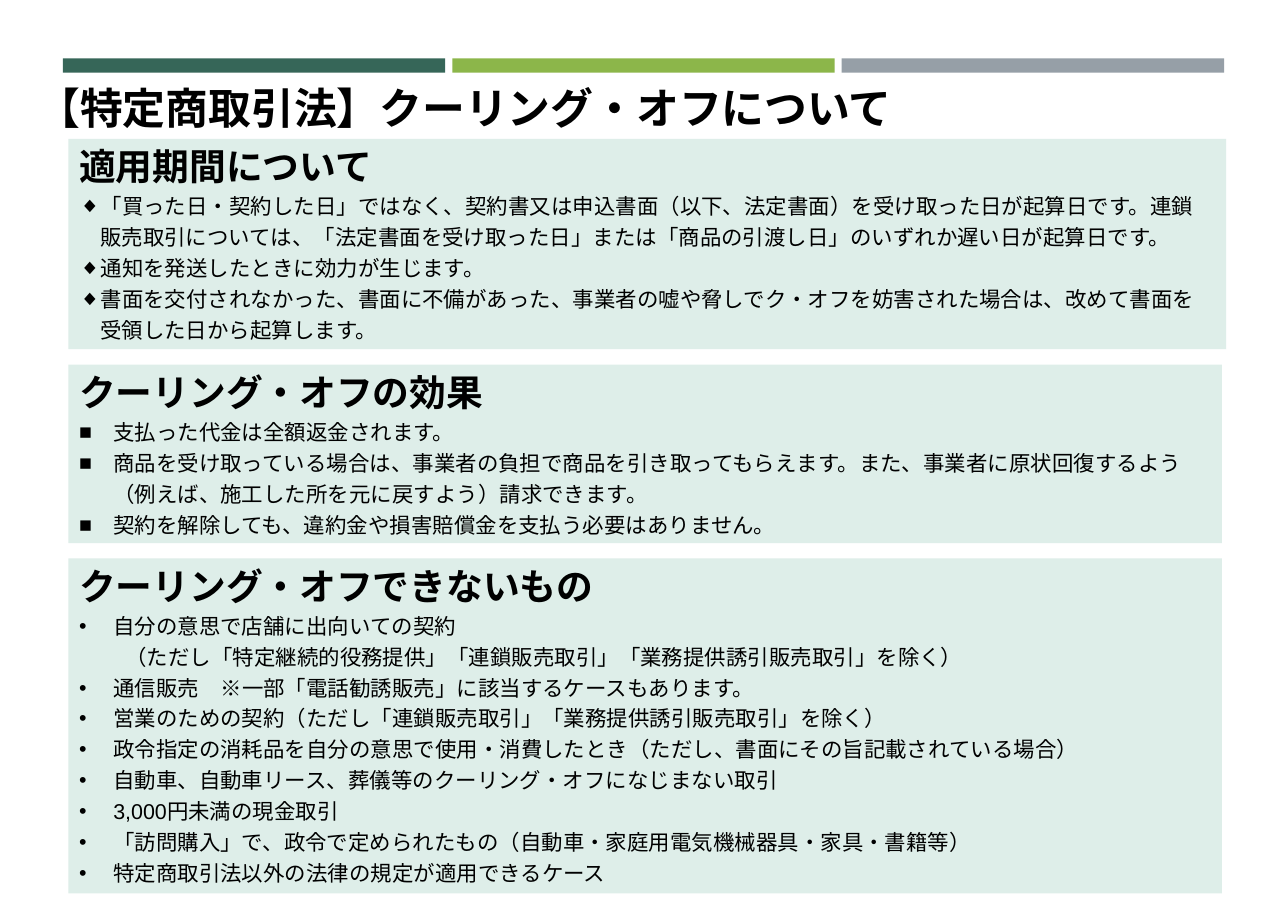
from lxml import etree
from pptx import Presentation
from pptx.dml.color import RGBColor
from pptx.enum.shapes import MSO_SHAPE
from pptx.enum.text import MSO_ANCHOR, MSO_AUTO_SIZE, PP_ALIGN
from pptx.oxml.ns import qn
from pptx.util import Inches, Pt

RECT = MSO_SHAPE.RECTANGLE
TOP = MSO_ANCHOR.TOP
LEFT = PP_ALIGN.LEFT
GROW = MSO_AUTO_SIZE.SHAPE_TO_FIT_TEXT
FONT = "Arial"
COLORS = {"pine": "366658", "leaf": "8CB64A", "slate": "969FA7",
          "panel": "DEEEE9", "text": "000000"}

BARS = ["pine", "leaf", "slate"]
TITLE = "【特定商取引法】クーリング・オフについて"
EXCEPTION = "（ただし「特定継続的役務提供」「連鎖販売取引」「業務提供誘引販売取引」を除く）"
PANELS = [
    (1.26, 10.51, 1.91, "◆", 0.19, "適用期間について", [
        "「買った日・契約した日」ではなく、契約書又は申込書面（以下、法定書面）を受け取った日が起算日です。連鎖販売取引については、「法定書面を受け取った日」または「商品の引渡し日」のいずれか遅い日が起算日です。",
        "通知を発送したときに効力が生じます。",
        "書面を交付されなかった、書面に不備があった、事業者の嘘や脅しでク・オフを妨害された場合は、改めて書面を受領した日から起算します。",
    ]),
    (3.31, 10.47, 1.62, "■", 0.31, "クーリング・オフの効果", [
        "支払った代金は全額返金されます。",
        "商品を受け取っている場合は、事業者の負担で商品を引き取ってもらえます。また、事業者に原状回復するよう（例えば、施工した所を元に戻すよう）請求できます。",
        "契約を解除しても、違約金や損害賠償金を支払う必要はありません。",
    ]),
    (5.07, 10.47, 3.04, "•", 0.31, "クーリング・オフできないもの", [
        "自分の意思で店舗に出向いての契約",
        EXCEPTION,
        "通信販売　※一部「電話勧誘販売」に該当するケースもあります。",
        "営業のための契約（ただし「連鎖販売取引」「業務提供誘引販売取引」を除く）",
        "政令指定の消耗品を自分の意思で使用・消費したとき（ただし、書面にその旨記載されている場合）",
        "自動車、自動車リース、葬儀等のクーリング・オフになじまない取引",
        "3,000円未満の現金取引",
        "「訪問購入」で、政令で定められたもの（自動車・家庭用電気機械器具・家具・書籍等）",
        "特定商取引法以外の法律の規定が適用できるケース",
    ]),
]


class CoolingOffSlide:
    """Draws bars, titles and bulleted panels in one style on a slide."""

    def __init__(self, s):
        self.s = s

    def rect(self, x, y, w, h, color):
        sp = self.s.shapes.add_shape(RECT, Inches(x), Inches(y), Inches(w), Inches(h))
        sp.shadow.inherit = False
        sp.fill.solid()
        sp.fill.fore_color.rgb = RGBColor.from_string(COLORS[color])
        sp.line.fill.background()
        return sp

    def style(self, p, size, bold=False):
        p.alignment = LEFT
        for r in p.runs:
            r.font.name = FONT
            r.font.size = Pt(size)
            r.font.bold = bold
            r.font.color.rgb = RGBColor.from_string(COLORS["text"])
            rPr = r.font._element
            rPr.set("lang", "ja-JP")
            etree.SubElement(rPr, qn("a:ea")).set("typeface", FONT)

    def title(self, x, y, w, h, text):
        tf = self.s.shapes.add_textbox(Inches(x), Inches(y), Inches(w), Inches(h)).text_frame
        tf.word_wrap = True
        tf.text = text
        self.style(tf.paragraphs[0], 28, True)

    def bullet(self, p, char, indent):
        pPr = p._p.get_or_add_pPr()
        pPr.set("marL", str(Inches(indent)))
        pPr.set("indent", str(-Inches(indent)))
        etree.SubElement(pPr, qn("a:buFont")).set("typeface", FONT)
        etree.SubElement(pPr, qn("a:buChar")).set("char", char)

    def panel(self, y, w, h, char, indent, heading, items):
        tf = self.rect(0.62, y, w, h, "panel").text_frame
        tf.word_wrap = True
        tf.vertical_anchor = TOP
        tf.auto_size = GROW
        tf.text = heading
        self.style(tf.paragraphs[0], 24, True)
        for item in items:
            p = tf.add_paragraph()
            p.text = item
            p.line_spacing = 1.2
            self.style(p, 14)
            if item == EXCEPTION:
                p._p.get_or_add_pPr().set("marL", str(Inches(indent + 0.11)))
            else:
                self.bullet(p, char, indent)


def main():
    prs = Presentation()
    prs.slide_width = Inches(11.69)
    prs.slide_height = Inches(8.27)
    slide = CoolingOffSlide(prs.slides.add_slide(prs.slide_layouts[6]))
    for i, color in enumerate(BARS):
        slide.rect(0.57 + 3.535 * i, 0.53, 3.47, 0.13, color)
    slide.title(0.24, 0.69, 8.78, 0.57, TITLE)
    for panel in PANELS:
        slide.panel(*panel)
    prs.save("out.pptx")


if __name__ == "__main__":
    main()
